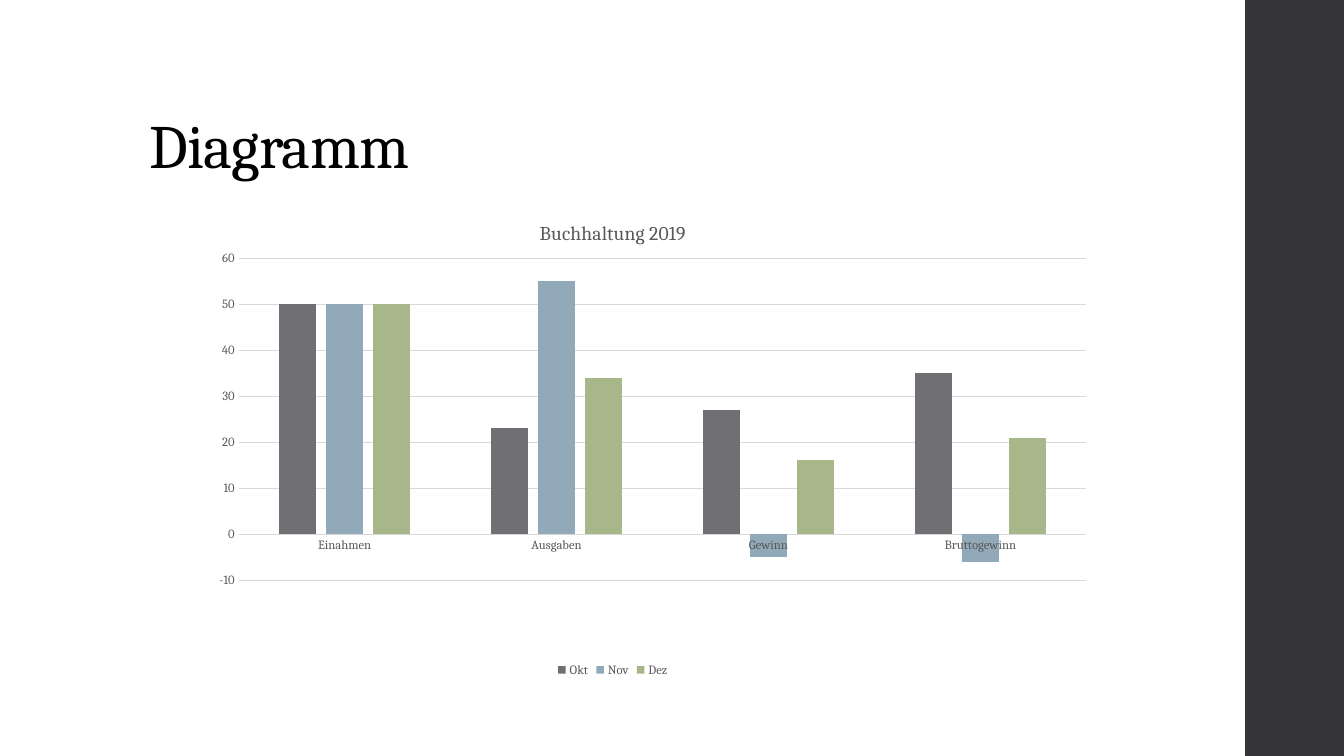
"""Build the slide "Diagramm" with a clustered column chart of the 2019 accounts."""
from lxml import etree
from pptx import Presentation
from pptx import util as u
from pptx.chart import data as chart_data
from pptx.dml.color import RGBColor
from pptx.enum import chart as chart_enum
from pptx.enum import shapes, text
from pptx.oxml import ns

FONT = "Cambria"
COLOURS = {
    "background": "FFFFFF",
    "band": "353537",
    "title": "000000",
    "label": "595959",
    "grid": "D9D9D9",
    "Okt": "6F6F74",
    "Nov": "92A9B9",
    "Dez": "A7B789",
}
CATEGORIES = ["Einahmen", "Ausgaben", "Gewinn", "Bruttogewinn"]
SERIES = {
    "Okt": [50, 23, 27, 35],
    "Nov": [50, 55, -5, -6],
    "Dez": [50, 34, 16, 21],
}
PLOT_LAYOUT = {"x": 0.105, "y": 0.118, "w": 0.895, "h": 0.671}


def colour(name):
    return RGBColor.from_string(COLOURS[name])


def style_font(font, size, colour_name):
    font.name = FONT
    font.size = u.Pt(size)
    font.bold = False
    font.color.rgb = colour(colour_name)


def style_line(line, colour_name):
    line.color.rgb = colour(colour_name)
    line.width = u.Pt(0.75)


def add_band(slide, left, top, width, height):
    band = slide.shapes.add_shape(
        shapes.MSO_SHAPE.RECTANGLE, *map(u.Inches, (left, top, width, height)))
    band.shadow.inherit = False
    band.fill.solid()
    band.fill.fore_color.rgb = colour("band")
    band.line.fill.background()


def set_title(slide, words, left, top, width, height):
    title = slide.shapes.title
    title.left, title.top = u.Inches(left), u.Inches(top)
    title.width, title.height = u.Inches(width), u.Inches(height)
    title.text_frame.vertical_anchor = text.MSO_ANCHOR.BOTTOM
    paragraph = title.text_frame.paragraphs[0]
    paragraph.alignment = text.PP_ALIGN.LEFT
    paragraph.line_spacing = 0.9
    run = paragraph.add_run()
    run.text = words
    style_font(run.font, 44, "title")
    run.font._element.set("spc", "-50")


def set_plot_layout(chart):
    plot_area = chart._chartSpace.chart.plotArea
    for layout in plot_area.findall(ns.qn("c:layout")):
        plot_area.remove(layout)
    layout = etree.Element(ns.qn("c:layout"))
    manual = etree.SubElement(layout, ns.qn("c:manualLayout"))
    settings = {"layoutTarget": "inner", "xMode": "edge", "yMode": "edge", **PLOT_LAYOUT}
    for tag, value in settings.items():
        etree.SubElement(manual, ns.qn(f"c:{tag}")).set("val", str(value))
    plot_area.insert(0, layout)


def style_axes(chart):
    for axis in (chart.category_axis, chart.value_axis):
        axis.major_tick_mark = chart_enum.XL_TICK_MARK.NONE
        axis.minor_tick_mark = chart_enum.XL_TICK_MARK.NONE
        style_font(axis.tick_labels.font, 9, "label")
    style_line(chart.category_axis.format.line, "grid")
    values = chart.value_axis
    values.minimum_scale, values.maximum_scale, values.major_unit = -10, 60, 10
    values.format.line.fill.background()
    values.has_major_gridlines = True
    style_line(values.major_gridlines.format.line, "grid")


def add_column_chart(slide, heading, left, top, width, height):
    accounts = chart_data.CategoryChartData()
    accounts.categories = CATEGORIES
    for name, values in SERIES.items():
        accounts.add_series(name, values)
    chart = slide.shapes.add_chart(
        chart_enum.XL_CHART_TYPE.COLUMN_CLUSTERED,
        *map(u.Inches, (left, top, width, height)), accounts).chart
    style_font(chart.font, 10, "title")

    chart.has_title = True
    chart.chart_title.include_in_layout = False
    run = chart.chart_title.text_frame.paragraphs[0].add_run()
    run.text = heading
    style_font(run.font, 14, "label")

    chart.has_legend = True
    chart.legend.position = chart_enum.XL_LEGEND_POSITION.BOTTOM
    chart.legend.include_in_layout = False
    style_font(chart.legend.font, 9, "label")

    plot = chart.plots[0]
    plot.gap_width, plot.overlap = 219, -27
    plot.vary_by_categories = False
    for series in plot.series:
        series.invert_if_negative = False
        series.format.fill.solid()
        series.format.fill.fore_color.rgb = colour(series.name)
    style_axes(chart)
    set_plot_layout(chart)


def main():
    presentation = Presentation()
    presentation.slide_width = u.Inches(13.33)
    presentation.slide_height = u.Inches(7.5)
    slide = presentation.slides.add_slide(presentation.slide_layouts.get_by_name("Title Only"))
    slide.background.fill.solid()
    slide.background.fill.fore_color.rgb = colour("background")
    add_band(slide, 12.35, 0, 0.98, 7.5)
    set_title(slide, "Diagramm", 1.38, 0.4, 10.6, 1.45)
    add_column_chart(slide, "Buchhaltung 2019", 1.38, 2, 9.4, 4.76)
    presentation.save("out.pptx")


if __name__ == "__main__":
    main()
